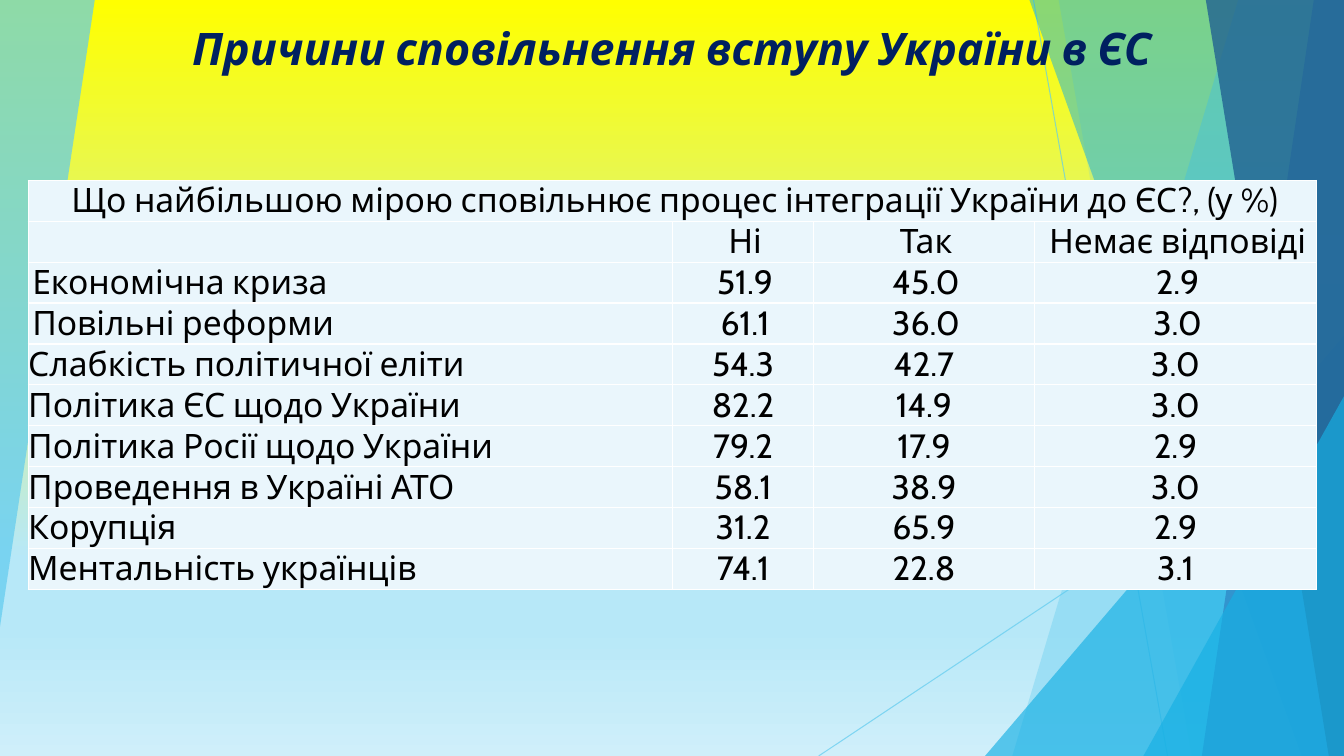
import pptx
import pptx.util
import pptx.dml.color
import pptx.enum.shapes
import pptx.enum.text
import pptx.oxml
import pptx.oxml.ns
from lxml import etree

Inches, Pt = pptx.util.Inches, pptx.util.Pt
ALIGN = pptx.enum.text.PP_ALIGN
FONT = "Cabin"
COLORS = {"navy": "002060", "black": "000000", "white": "FFFFFF", "cell": "EAF6FC",
          "sky": "5FCBEF", "azure": "17B0E4", "blue": "2E83C3", "deep": "226292",
          "yellow": "FFFF00", "pale": "B7E8F8", "mist": "CFEFFA"}

# Content
TITLE = "Причини сповільнення вступу України в ЄС"
QUESTION = "Що найбільшою мірою сповільнює процес інтеграції України до ЄС?, (у %)"
ROWS = [
    (QUESTION, "", "", ""),
    ("", "Ні", "Так", "Немає відповіді"),
    ("Економічна криза", "51.9", "45.0", "2.9"),
    ("Повільні реформи", "61.1", "36.0", "3.0"),
    ("Слабкість політичної еліти", "54.3", "42.7", "3.0"),
    ("Політика ЄС щодо України", "82.2", "14.9", "3.0"),
    ("Політика Росії щодо України", "79.2", "17.9", "2.9"),
    ("Проведення в Україні АТО", "58.1", "38.9", "3.0"),
    ("Корупція", "31.2", "65.9", "2.9"),
    ("Ментальність українців", "74.1", "22.8", "3.1"),
]
COLUMN_WIDTHS = [6.39, 1.4, 2.19, 2.8]
ROW_HEIGHT = 0.4
INDENTED_ROWS = 4

# Backdrop, from back to front: kind, points, colour, opacity in percent
BACKGROUND = [(0, "yellow"), (74, "pale"), (83, "pale"), (100, "mist")]
RIGHT, BOTTOM = 13.33, 7.5
BACKDROP = [
    ("facet", [(0, 0), (0.94, 0), (0, 6.22)], "sky", 70),
    ("line", [(10.25, 0), (11.58, BOTTOM)], "sky", 70),
    ("line", [(RIGHT, 4.03), (8.12, BOTTOM)], "sky", 70),
    ("facet", [(12.28, 0), (RIGHT, 0), (RIGHT, BOTTOM), (10.04, BOTTOM)], "sky", 36),
    ("facet", [(10.5, 0), (RIGHT, 0), (RIGHT, BOTTOM), (11.82, BOTTOM)], "sky", 20),
    ("triangle", [(9.77, 3.33), (RIGHT, BOTTOM)], "azure", 66),
    ("facet", [(10.21, 0), (RIGHT, 0), (RIGHT, BOTTOM), (12.91, BOTTOM)], "azure", 50),
    ("facet", [(13.03, 0), (RIGHT, 0), (RIGHT, BOTTOM), (11.92, BOTTOM)], "blue", 70),
    ("facet", [(11.96, 0), (RIGHT, 0), (RIGHT, BOTTOM), (13.18, BOTTOM)], "deep", 80),
    ("triangle", [(11.34, 3.93), (RIGHT, BOTTOM)], "azure", 66),
]


def rgb(name):
    return pptx.dml.color.RGBColor.from_string(COLORS[name])


def set_opacity(element, percent):
    color = next(element.iter(pptx.oxml.ns.qn("a:srgbClr")))
    etree.SubElement(color, pptx.oxml.ns.qn("a:alpha"), val=str(percent * 1000))


def paint_background(page):
    page.background.fill.solid()
    solid = next(page.element.iter(pptx.oxml.ns.qn("a:solidFill")))
    stops = "".join(f'<a:gs pos="{pos * 1000}"><a:srgbClr val="{COLORS[name]}"/></a:gs>'
                    for pos, name in BACKGROUND)
    gradient = pptx.oxml.parse_xml(
        f'<a:gradFill {pptx.oxml.ns.nsdecls("a")} rotWithShape="1"><a:gsLst>{stops}</a:gsLst>'
        '<a:lin ang="5400000" scaled="0"/></a:gradFill>')
    solid.getparent().replace(solid, gradient)


def add_backdrop_part(page, kind, points, color, opacity):
    points = [(Inches(x), Inches(y)) for x, y in points]
    (left, top), (right, bottom) = points[0], points[-1]
    if kind == "line":
        line = page.shapes.add_connector(
            pptx.enum.shapes.MSO_CONNECTOR.STRAIGHT, left, top, right, bottom)
        line.line.color.rgb = rgb(color)
        line.line.width = Pt(0.75)
        properties = line.element.spPr
        set_opacity(properties, opacity)
        etree.SubElement(properties, pptx.oxml.ns.qn("a:effectLst"))
        return
    if kind == "triangle":
        shape = page.shapes.add_shape(pptx.enum.shapes.MSO_SHAPE.ISOSCELES_TRIANGLE,
                                      left, top, right - left, bottom - top)
        shape.adjustments[0] = 1
    else:
        builder = page.shapes.build_freeform(left, top)
        builder.add_line_segments(points[1:], close=True)
        shape = builder.convert_to_shape()
    shape.shadow.inherit = False
    shape.fill.solid()
    shape.fill.fore_color.rgb = rgb(color)
    set_opacity(shape.element.spPr, opacity)
    shape.line.fill.background()


def format_title(title):
    title.left, title.top = Inches(0), Inches(0.15)
    title.width, title.height = Inches(RIGHT), Inches(0.64)
    frame = title.text_frame
    frame.text = TITLE
    frame.word_wrap = True
    frame.auto_size = pptx.enum.text.MSO_AUTO_SIZE.NONE
    frame.vertical_anchor = pptx.enum.text.MSO_ANCHOR.MIDDLE
    para = frame.paragraphs[0]
    para.alignment = ALIGN.CENTER
    font = para.font
    font.name, font.size, font.bold, font.italic = FONT, Pt(32), True, True
    font.color.rgb = rgb("navy")
    title.element.getparent().append(title.element)  # in front of the backdrop


def format_cell(cell, text, centred, indented):
    cell.text = text
    cell.margin_left = cell.margin_right = cell.margin_top = cell.margin_bottom = 0
    cell.vertical_anchor = pptx.enum.text.MSO_ANCHOR.MIDDLE
    para = cell.text_frame.paragraphs[0]
    para.alignment = ALIGN.CENTER if centred else ALIGN.LEFT
    para.font.name, para.font.size = FONT, Pt(24)
    para.font.color.rgb = rgb("black")
    if indented:
        para.font  # the paragraph properties now exist
        next(para._p.iter(pptx.oxml.ns.qn("a:pPr"))).set("marL", str(Inches(0.04)))
    cell.fill.solid()
    cell.fill.fore_color.rgb = rgb("cell")
    properties = next(cell._tc.iter(pptx.oxml.ns.qn("a:tcPr")))
    for place, side in enumerate("LRTB"):
        properties.insert(place, pptx.oxml.parse_xml(
            f'<a:ln{side} {pptx.oxml.ns.nsdecls("a")} w="{Pt(1)}"><a:solidFill>'
            f'<a:srgbClr val="{COLORS["white"]}"/></a:solidFill></a:ln{side}>'))


def add_survey_table(page):
    frame = page.shapes.add_table(
        len(ROWS), len(COLUMN_WIDTHS), Inches(0.28), Inches(1.79),
        Inches(sum(COLUMN_WIDTHS)), Inches(ROW_HEIGHT * len(ROWS)))
    table = frame.table
    table.first_row = table.horz_banding = False
    for column, width in zip(table.columns, COLUMN_WIDTHS):
        column.width = Inches(width)
    for row_index, values in enumerate(ROWS):
        table.rows[row_index].height = Inches(ROW_HEIGHT)
        for column_index, text in enumerate(values):
            format_cell(table.cell(row_index, column_index), text,
                        centred=column_index > 0 or row_index == 0,
                        indented=row_index < INDENTED_ROWS)
    table.cell(0, 0).merge(table.cell(0, len(COLUMN_WIDTHS) - 1))


def main():
    deck = pptx.Presentation()
    deck.slide_width, deck.slide_height = Inches(RIGHT), Inches(BOTTOM)
    page = deck.slides.add_slide(deck.slide_layouts[5])
    paint_background(page)
    for part in BACKDROP:
        add_backdrop_part(page, *part)
    format_title(page.shapes.title)
    add_survey_table(page)
    deck.save("out.pptx")


if __name__ == "__main__":
    main()
